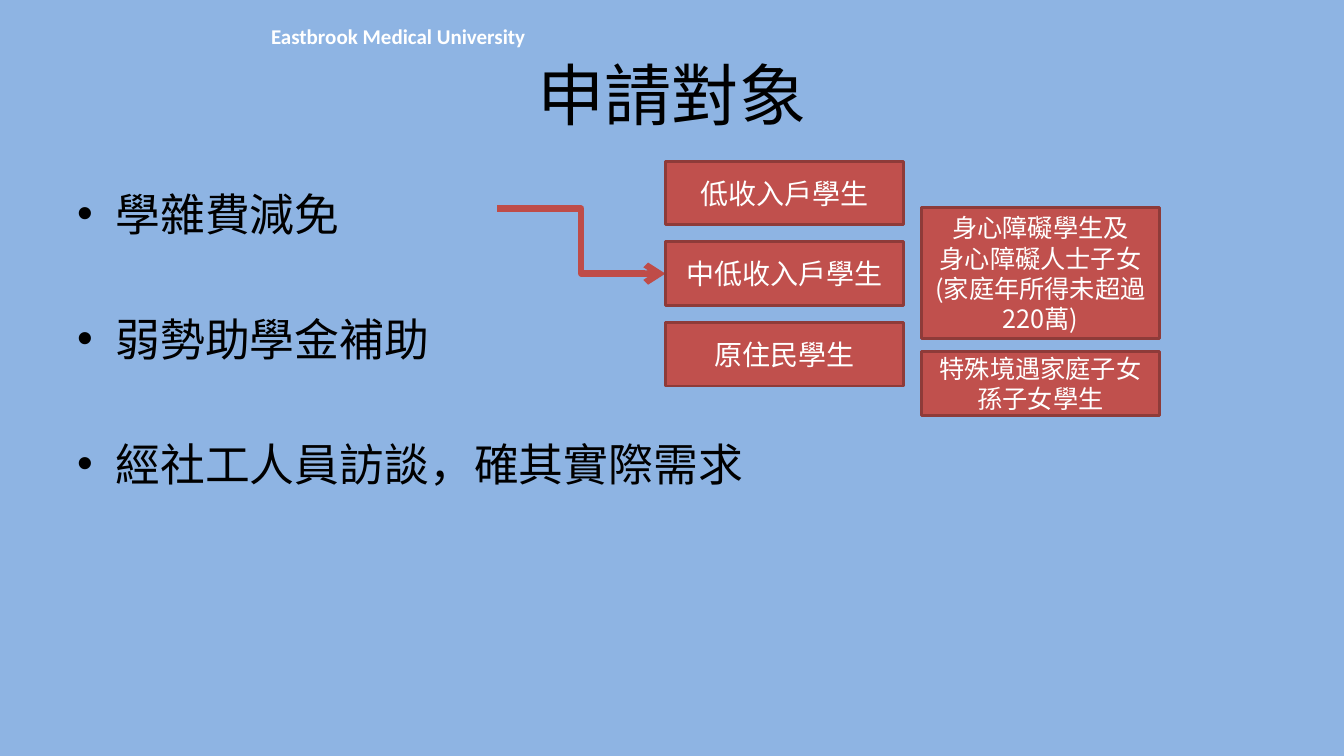
"""Build the slide that lists who may apply for student aid."""
from lxml import etree
from pptx import Presentation
from pptx.dml.color import RGBColor
from pptx.enum.shapes import MSO_CONNECTOR, MSO_SHAPE
from pptx.enum.text import MSO_ANCHOR, PP_ALIGN
from pptx.oxml.ns import qn
from pptx.util import Inches, Pt

HEADER = "Eastbrook Medical University"
TITLE = "申請對象"
AID_TYPES = ["學雜費減免", "弱勢助學金補助", "經社工人員訪談，確其實際需求"]
INCOME_GROUPS = ["低收入戶學生", "中低收入戶學生", "原住民學生"]
FAMILY_GROUPS = [
    (["身心障礙學生及", "身心障礙人士子女", "(家庭年所得未超過220萬)"], 1.3),
    (["特殊境遇家庭子女", "孫子女學生"], 0.63),
]

SKY = RGBColor(0x8E, 0xB4, 0xE3)
BRICK = RGBColor(0xC0, 0x50, 0x4D)
BRICK_EDGE = RGBColor(0x8E, 0x3B, 0x39)
ARROW = RGBColor(0xBF, 0x4C, 0x48)
BLACK = RGBColor(0, 0, 0)
WHITE = RGBColor(0xFF, 0xFF, 0xFF)
CJK, LATIN = "Noto Sans CJK SC", "Calibri"
CENTER, LEFT = PP_ALIGN.CENTER, PP_ALIGN.LEFT
MIDDLE, TOP = MSO_ANCHOR.MIDDLE, MSO_ANCHOR.TOP

WIDTH, HEIGHT = 13.33, 7.5
MARGIN = WIDTH * 0.05
BOX_W, BOX_H = 2.36, 0.63
INCOME_X, INCOME_Y, INCOME_PITCH = 6.6, 1.6, 0.8
FAMILY_X, FAMILY_Y, FAMILY_GAP = 9.14, 2.06, 0.13
ARROW_X, ARROW_Y = 4.93, 2.07
BULLET_INDENT = Inches(0.38)


def write(tf, lines, size, color, font=CJK, align=CENTER, anchor=MIDDLE,
          bold=False, leading=None, gap=0):
    tf.word_wrap = True
    tf.vertical_anchor = anchor
    for i, line in enumerate(lines):
        p = tf.paragraphs[0] if i == 0 else tf.add_paragraph()
        p.alignment = align
        p.space_before = Pt(gap if i else 0)
        if leading:
            p.line_spacing = Pt(leading)
        r = p.add_run()
        r.text = line
        r.font.size, r.font.bold, r.font.name = Pt(size), bold, font
        r.font.color.rgb = color
        etree.SubElement(r.font._element, qn("a:ea"), typeface=font)


def add_text(s, x, y, w, h, lines, size, color, **style):
    sp = s.shapes.add_textbox(Inches(x), Inches(y), Inches(w), Inches(h))
    write(sp.text_frame, lines, size, color, **style)
    return sp.text_frame


def add_box(s, x, y, h, lines, size, leading=None):
    sp = s.shapes.add_shape(MSO_SHAPE.RECTANGLE, Inches(x), Inches(y),
                            Inches(BOX_W), Inches(h))
    sp.shadow.inherit = False
    sp.fill.solid()
    sp.fill.fore_color.rgb = BRICK
    sp.line.color.rgb = BRICK_EDGE
    sp.line.width = Pt(2)
    write(sp.text_frame, lines, size, WHITE, leading=leading)


def add_bullets(tf):
    for p in tf.paragraphs:
        pr = p._p.get_or_add_pPr()
        pr.set("marL", str(BULLET_INDENT))
        pr.set("indent", str(-BULLET_INDENT))
        etree.SubElement(pr, qn("a:buFont"), typeface="Arial")
        etree.SubElement(pr, qn("a:buChar"), char="•")


def add_arrow(s, x1, y1, x2, y2):
    line = s.shapes.add_connector(MSO_CONNECTOR.ELBOW, Inches(x1), Inches(y1),
                                  Inches(x2), Inches(y2))
    line.line.color.rgb = ARROW
    line.line.width = Pt(4.5)
    etree.SubElement(line.line._get_or_add_ln(), qn("a:tailEnd"), type="arrow")
    etree.SubElement(line._element.spPr, qn("a:effectLst"))


def main():
    prs = Presentation()
    prs.slide_width, prs.slide_height = Inches(WIDTH), Inches(HEIGHT)
    s = prs.slides.add_slide(prs.slide_layouts[6])
    s.background.fill.solid()
    s.background.fill.fore_color.rgb = SKY

    body_w = WIDTH - 2 * MARGIN
    add_text(s, MARGIN, 0.3, body_w, 1.25, [TITLE], 48, BLACK)
    tf = add_text(s, MARGIN, 1.75, body_w, 4.95, AID_TYPES, 32, BLACK,
                  align=LEFT, anchor=TOP, leading=42, gap=47.3)
    add_bullets(tf)

    add_arrow(s, ARROW_X, ARROW_Y, INCOME_X, INCOME_Y + INCOME_PITCH + BOX_H / 2)
    for i, group in enumerate(INCOME_GROUPS):
        add_box(s, INCOME_X, INCOME_Y + i * INCOME_PITCH, BOX_H, [group], 20)
    y = FAMILY_Y
    for lines, h in FAMILY_GROUPS:
        add_box(s, FAMILY_X, y, h, lines, 18, leading=21.5)
        y += h + FAMILY_GAP

    add_text(s, 2.41, 0.18, 3.08, 0.35, [HEADER], 15, WHITE,
             font=LATIN, anchor=TOP, bold=True)
    prs.save("out.pptx")


if __name__ == "__main__":
    main()
